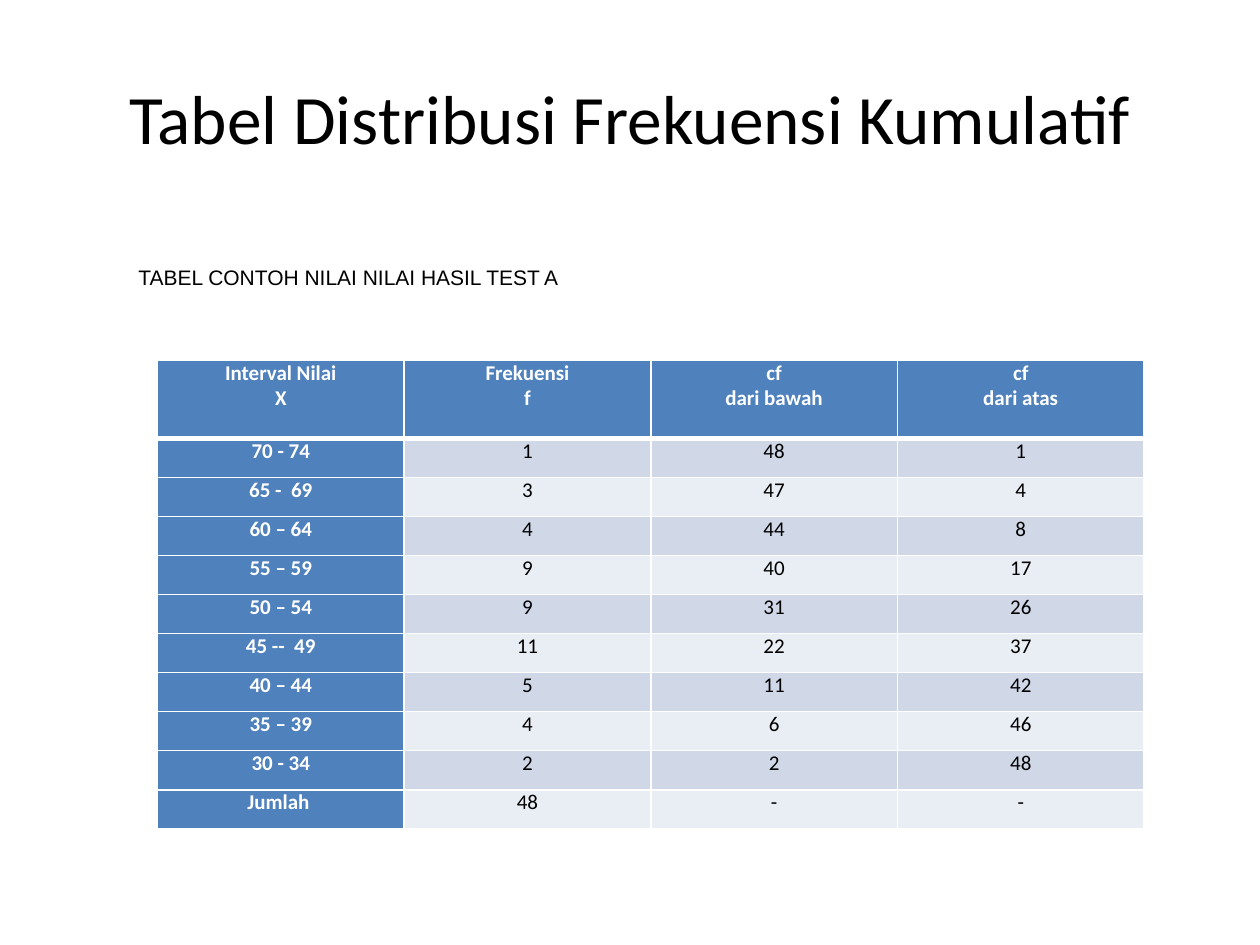
import pptx
import pptx.util
import pptx.dml.color
import pptx.enum.text
import pptx.oxml
import pptx.oxml.ns

Inches = pptx.util.Inches
Pt = pptx.util.Pt
ALIGN = pptx.enum.text.PP_ALIGN
ANCHOR = pptx.enum.text.MSO_ANCHOR

WHITE, BLACK, BLUE = "FFFFFF", "000000", "4F81BD"
BANDS = ("D0D8E8", "E9EDF4")

HEAD = ["Interval Nilai\nX", "Frekuensi\nf", "cf\ndari bawah", "cf\ndari atas"]
ROWS = [
    ["70 - 74", "1", "48", "1"],
    ["65 -  69", "3", "47", "4"],
    ["60 – 64", "4", "44", "8"],
    ["55 – 59", "9", "40", "17"],
    ["50 – 54", "9", "31", "26"],
    ["45 --  49", "11", "22", "37"],
    ["40 – 44", "5", "11", "42"],
    ["35 – 39", "4", "6", "46"],
    ["30 - 34", "2", "2", "48"],
    ["Jumlah ", "48", "-", "-"],
]


def color(code):
    return pptx.dml.color.RGBColor.from_string(code)


class Page:
    """Holds the style and the current slide."""

    font = "Calibri"
    small = 12

    def __init__(self, slide):
        self.slide = slide

    def place(self, shape, box):
        shape.left, shape.top, shape.width, shape.height = map(Inches, box)

    def text(self, frame, text, size, font=None, ink=BLACK, bold=False,
             align=ALIGN.CENTER):
        for i, line in enumerate(text.split("\n")):
            para = frame.add_paragraph() if i else frame.paragraphs[0]
            para.alignment = align
            run = para.add_run()
            run.text = line
            run.font.name = font or self.font
            run.font.size = Pt(size)
            run.font.bold = bold
            run.font.color.rgb = color(ink)

    def title(self, text, box):
        shape = self.slide.shapes.title
        self.place(shape, box)
        shape.text_frame.vertical_anchor = ANCHOR.MIDDLE
        self.text(shape.text_frame, text, 39.6)

    def label(self, text, box):
        frame = self.slide.shapes.add_textbox(*map(Inches, box)).text_frame
        frame.word_wrap = True
        frame.vertical_anchor = ANCHOR.TOP
        self.text(frame, text, self.small, font="Arial", align=ALIGN.LEFT)

    def edge(self, cell, side, width):
        line = pptx.oxml.parse_xml(
            f'<a:ln{side} {pptx.oxml.ns.nsdecls("a")} w="{Pt(width)}">'
            f'<a:solidFill><a:srgbClr val="{WHITE}"/></a:solidFill></a:ln{side}>')
        cell._tc.get_or_add_tcPr().append(line)

    def cell(self, cell, text, row, col):
        cell.margin_left = cell.margin_right = Inches(0.07)
        cell.margin_top = cell.margin_bottom = 0
        # A thick rule parts the header from the body
        for side in "LRTB":
            thick = (row, side) in ((0, "B"), (1, "T"))
            self.edge(cell, side, 3 if thick else 1)
        key = row == 0 or col == 0
        cell.fill.solid()
        cell.fill.fore_color.rgb = color(BLUE if key else BANDS[(row - 1) % 2])
        self.text(cell.text_frame, text, self.small,
                  ink=WHITE if key else BLACK, bold=key)

    def table(self, data, box, tall, low):
        shape = self.slide.shapes.add_table(
            len(data), len(data[0]), *map(Inches, box))
        grid = shape.table
        grid.horz_banding = False
        for col in grid.columns:
            col.width = Inches(box[2] / len(data[0]))
        for r, line in enumerate(data):
            grid.rows[r].height = Inches(low if r else tall)
            for c, text in enumerate(line):
                self.cell(grid.cell(r, c), text, r, c)


def main():
    deck = pptx.Presentation()
    deck.slide_width, deck.slide_height = Inches(10), Inches(7.5)
    page = Page(deck.slides.add_slide(deck.slide_layouts[5]))

    # Heading
    page.title("Tabel Distribusi Frekuensi Kumulatif", (0.5, 0.3, 9, 1.25))

    # Cumulative frequency table
    page.table([HEAD] + ROWS, (1.25, 2.86, 7.83, 3.72), tall=0.62, low=0.31)

    # Caption above the table
    page.label("TABEL CONTOH NILAI NILAI HASIL TEST A", (1, 2.05, 8.33, 0.61))

    deck.save("out.pptx")


if __name__ == "__main__":
    main()
